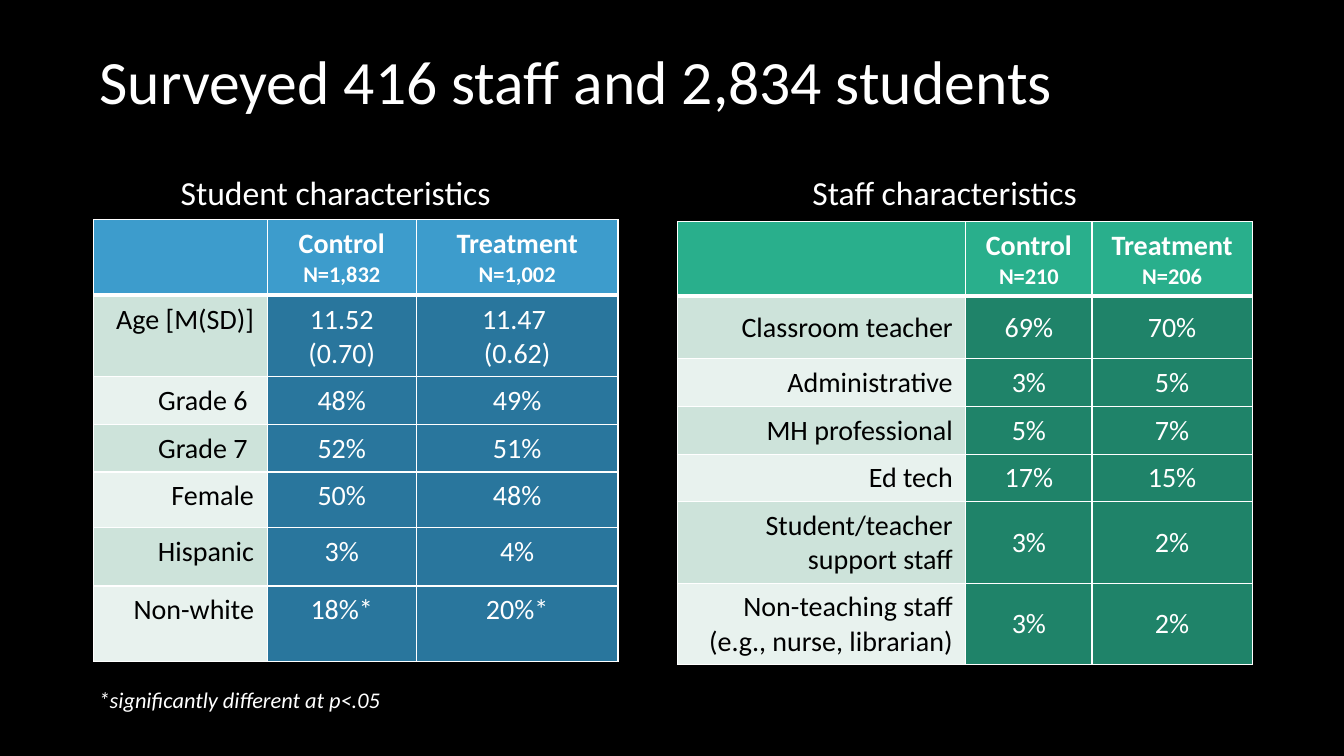
"""Build the survey sample slide with its student and staff tables."""
from dataclasses import dataclass

from lxml import etree
from pptx import Presentation
from pptx.dml.color import RGBColor
from pptx.enum.text import MSO_ANCHOR, PP_ALIGN
from pptx.oxml.ns import qn
from pptx.slide import Slide
from pptx.table import _Cell
from pptx.text.text import TextFrame
from pptx.util import Inches, Pt

LEFT, CENTER, RIGHT = PP_ALIGN.LEFT, PP_ALIGN.CENTER, PP_ALIGN.RIGHT
TOP, MIDDLE = MSO_ANCHOR.TOP, MSO_ANCHOR.MIDDLE

BLACK = RGBColor(0x00, 0x00, 0x00)
WHITE = RGBColor(0xFF, 0xFF, 0xFF)
BLUE = RGBColor(0x3D, 0x9C, 0xCC)
DARK_BLUE = RGBColor(0x29, 0x76, 0x9D)
GREEN = RGBColor(0x29, 0xAF, 0x8C)
DARK_GREEN = RGBColor(0x1F, 0x83, 0x69)
LABEL_BANDS = (RGBColor(0xCD, 0xE3, 0xDA), RGBColor(0xE8, 0xF2, 0xEE))

FONT = "Calibri"
THIN, THICK = 1, 3


@dataclass(frozen=True)
class Line:
    """One paragraph of text, with line breaks where it holds newlines."""
    text: str
    size: int
    color: RGBColor = WHITE
    align: PP_ALIGN = CENTER
    bold: bool = False
    italic: bool = False
    spacing: float = 1.0


@dataclass(frozen=True)
class Label:
    """A text box on the slide."""
    box: tuple[float, float, float, float]
    line: Line
    anchor: MSO_ANCHOR = TOP


@dataclass(frozen=True)
class SampleTable:
    """A table comparing the control and treatment groups."""
    left: float
    top: float
    columns: tuple[float, ...]
    heights: tuple[float, ...]
    header_color: RGBColor
    value_color: RGBColor
    anchor: MSO_ANCHOR
    groups: tuple[tuple[str, str], ...]
    rows: tuple[tuple[str, str, str], ...]


LABELS = (
    Label((0.89, 0.06, 12, 1.55),
          Line("Surveyed 416 staff and 2,834 students", 44, align=LEFT, spacing=0.9), MIDDLE),
    Label((1.1, 1.66, 4.46, 0.5), Line("Student characteristics", 24)),
    Label((7.14, 1.66, 4.46, 0.5), Line("Staff characteristics", 24)),
    Label((0.88, 6.76, 4.2, 0.37),
          Line("*significantly different at p<.05", 16, align=LEFT, italic=True)),
)

TABLES = (
    SampleTable(
        0.93, 2.18, (1.72, 1.48, 2), (0.75, 0.8, 0.44, 0.44, 0.55, 0.58, 0.75),
        BLUE, DARK_BLUE, TOP,
        (("Control", "N=1,832"), ("Treatment", "N=1,002")),
        (
            ("Age [M(SD)]", "11.52 (0.70)", "11.47 \n(0.62)"),
            ("Grade 6 ", "48%", "49%"),
            ("Grade 7 ", "52%", "51%"),
            ("Female", "50%", "48%"),
            ("Hispanic", "3%", "4%"),
            ("Non-white", "18%*", "20%*"),
        ),
    ),
    SampleTable(
        6.72, 2.2, (2.86, 1.25, 1.59), (0.72, 0.62, 0.47, 0.44, 0.44, 0.76, 0.76),
        GREEN, DARK_GREEN, MIDDLE,
        (("Control", "N=210"), ("Treatment", "N=206")),
        (
            ("Classroom teacher", "69%", "70%"),
            ("Administrative", "3%", "5%"),
            ("MH professional", "5%", "7%"),
            ("Ed tech", "17%", "15%"),
            ("Student/teacher support staff", "3%", "2%"),
            ("Non-teaching staff (e.g., nurse, librarian)", "3%", "2%"),
        ),
    ),
)


def write_lines(frame: TextFrame, lines: tuple[Line, ...]) -> None:
    """Fill a text frame with one paragraph per line."""
    for index, line in enumerate(lines):
        paragraph = frame.add_paragraph() if index else frame.paragraphs[0]
        paragraph.alignment = line.align
        paragraph.line_spacing = line.spacing
        for part_index, part in enumerate(line.text.split("\n")):
            if part_index:
                paragraph.add_line_break()
            run = paragraph.add_run()
            run.text = part
            run.font.name = FONT
            run.font.size = Pt(line.size)
            run.font.bold = line.bold
            run.font.italic = line.italic
            run.font.color.rgb = line.color


def add_label(slide: Slide, label: Label) -> None:
    """Add a wrapped text box."""
    frame = slide.shapes.add_textbox(*map(Inches, label.box)).text_frame
    frame.word_wrap = True
    frame.vertical_anchor = label.anchor
    write_lines(frame, (label.line,))


def set_borders(cell: _Cell, top: int, bottom: int) -> None:
    """Draw white borders around a cell, with widths in points."""
    properties = cell._tc.get_or_add_tcPr()
    for side, width in (("L", THIN), ("R", THIN), ("T", top), ("B", bottom)):
        border = etree.SubElement(properties, qn(f"a:ln{side}"), w=str(Pt(width)))
        fill = etree.SubElement(border, qn("a:solidFill"))
        etree.SubElement(fill, qn("a:srgbClr"), val=str(WHITE))


def style_cell(cell: _Cell, row: int, color: RGBColor, anchor: MSO_ANCHOR) -> None:
    """Set the borders, fill, margins and anchor of a cell."""
    set_borders(cell, THICK if row == 1 else THIN, THICK if row == 0 else THIN)
    cell.fill.solid()
    cell.fill.fore_color.rgb = color
    cell.margin_left = cell.margin_right = Inches(0.13)
    cell.margin_top = cell.margin_bottom = Inches(0.07)
    cell.vertical_anchor = anchor


def add_sample_table(slide: Slide, sample: SampleTable) -> None:
    """Add a table with a header row and one row per characteristic."""
    table = slide.shapes.add_table(
        len(sample.heights), len(sample.columns), Inches(sample.left), Inches(sample.top),
        Inches(sum(sample.columns)), Inches(sum(sample.heights))).table
    table.horz_banding = False
    for column, width in zip(table.columns, sample.columns):
        column.width = Inches(width)
    for row, height in zip(table.rows, sample.heights):
        row.height = Inches(height)

    for column in range(len(sample.columns)):
        style_cell(table.cell(0, column), 0, sample.header_color, TOP)
    for column, (group, count) in enumerate(sample.groups, start=1):
        lines = (Line(group, 20, bold=True), Line(count, 16, bold=True))
        write_lines(table.cell(0, column).text_frame, lines)

    for row, texts in enumerate(sample.rows, start=1):
        band = LABEL_BANDS[(row - 1) % len(LABEL_BANDS)]
        for column, text in enumerate(texts):
            cell = table.cell(row, column)
            style_cell(cell, row, sample.value_color if column else band, sample.anchor)
            line = Line(text, 20) if column else Line(text, 20, BLACK, RIGHT)
            write_lines(cell.text_frame, (line,))


def main() -> None:
    """Create the presentation and save it."""
    presentation = Presentation()
    presentation.slide_width = Inches(13.33)
    presentation.slide_height = Inches(7.5)
    slide = presentation.slides.add_slide(presentation.slide_layouts[6])
    slide.background.fill.solid()
    slide.background.fill.fore_color.rgb = BLACK
    for label in LABELS:
        add_label(slide, label)
    for sample in TABLES:
        add_sample_table(slide, sample)
    presentation.save("out.pptx")


if __name__ == "__main__":
    main()
